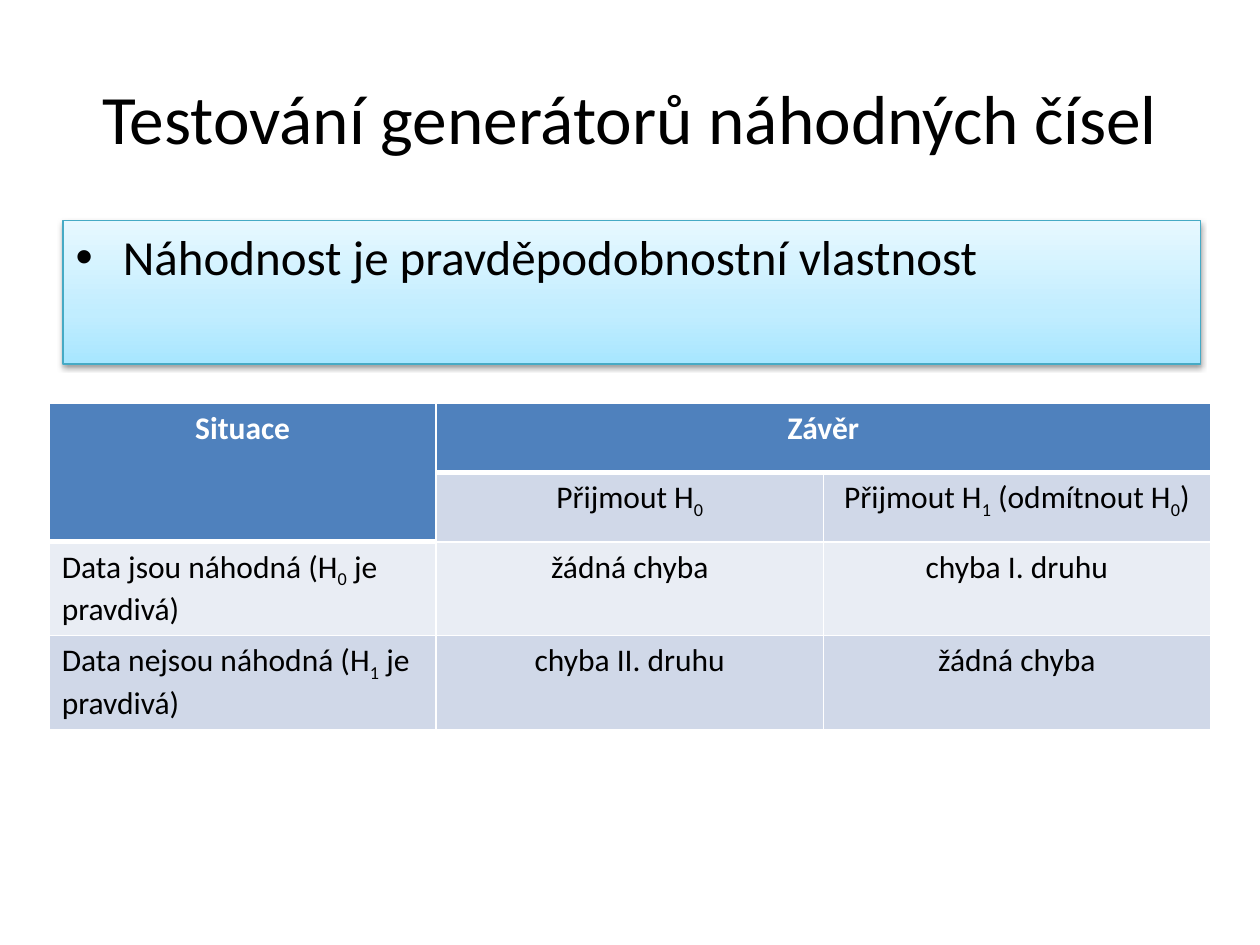
from dataclasses import dataclass

from lxml.etree import SubElement
from pptx import Presentation
from pptx.dml.color import RGBColor
from pptx.enum.text import MSO_ANCHOR, PP_ALIGN as Align
from pptx.oxml import parse_xml
from pptx.oxml.ns import nsdecls, qn
from pptx.util import Pt

FONT = "Calibri"
BLACK = RGBColor(0x00, 0x00, 0x00)
WHITE = RGBColor(0xFF, 0xFF, 0xFF)
HEADER = RGBColor(0x4F, 0x81, 0xBD)
BAND_DARK = RGBColor(0xD0, 0xD8, 0xE8)
BAND_LIGHT = RGBColor(0xE9, 0xED, 0xF4)
FRAME = RGBColor(0x46, 0xAA, 0xC5)
PANEL_STOPS = (
    (0, RGBColor(0xA7, 0xE6, 0xFF)),
    (35, RGBColor(0xC1, 0xED, 0xFF)),
    (100, RGBColor(0xE7, 0xF8, 0xFF)),
)
COL_WIDTH = Pt(221.2)
ROW_HEIGHT = Pt(39.6)
THIN, THICK = Pt(1), Pt(3)


@dataclass
class Cell:
    row: int
    col: int
    text: str
    rows: int = 1
    cols: int = 1

    @property
    def is_header(self) -> bool:
        return self.row == 0

    @property
    def fill(self) -> RGBColor:
        if self.is_header:
            return HEADER
        return BAND_DARK if self.row % 2 else BAND_LIGHT

    @property
    def align(self) -> Align:
        return Align.LEFT if self.row > 1 and self.col == 0 else Align.CENTER


CELLS = [
    Cell(0, 0, "Situace", rows=2),
    Cell(0, 1, "Závěr", cols=2),
    Cell(1, 1, "Přijmout H|0|"),
    Cell(1, 2, "Přijmout H|1| (odmítnout H|0|)"),
    Cell(2, 0, "Data jsou náhodná (H|0| je pravdivá)"),
    Cell(2, 1, "žádná chyba"),
    Cell(2, 2, "chyba I. druhu"),
    Cell(3, 0, "Data nejsou náhodná (H|1| je pravdivá)"),
    Cell(3, 1, "chyba II. druhu"),
    Cell(3, 2, "žádná chyba"),
]


def place(sp, left: float, top: float, width: float, height: float) -> None:
    sp.left, sp.top, sp.width, sp.height = map(Pt, (left, top, width, height))


def set_font(p, size: float, color: RGBColor, bold: bool = False) -> None:
    font = p.font
    font.name, font.size, font.bold = FONT, Pt(size), bold
    font.color.rgb = color


def style_panel(sp) -> None:
    sp.fill.gradient()
    sp.fill.gradient_angle = 90
    stops = sp._element.spPr.find(qn("a:gradFill")).find(qn("a:gsLst"))
    stops.clear()
    for position, color in PANEL_STOPS:
        stop = SubElement(stops, qn("a:gs"), pos=str(position * 1000))
        SubElement(stop, qn("a:srgbClr"), val=str(color))
    sp.line.color.rgb = FRAME
    sp.line.width = Pt(0.75)
    sp._element.spPr.append(parse_xml(
        f'<a:effectLst {nsdecls("a")}>'
        f'<a:outerShdw blurRad="{Pt(3.1)}" dist="{Pt(1.6)}" dir="5400000" rotWithShape="0">'
        '<a:srgbClr val="000000"><a:alpha val="38000"/></a:srgbClr>'
        '</a:outerShdw></a:effectLst>'))


def set_borders(cell, top: int, bottom: int) -> None:
    tc_pr = cell._tc.get_or_add_tcPr()
    for side, width in (("L", THIN), ("R", THIN), ("T", top), ("B", bottom)):
        line = SubElement(tc_pr, qn(f"a:ln{side}"), w=str(width))
        fill = SubElement(line, qn("a:solidFill"))
        SubElement(fill, qn("a:srgbClr"), val=str(WHITE))


def fill_cell(table, item: Cell) -> None:
    cell = table.cell(item.row, item.col)
    if item.rows * item.cols > 1:
        cell.merge(table.cell(item.row + item.rows - 1, item.col + item.cols - 1))
    below_header = item.row == (2 if item.col == 0 else 1)
    set_borders(cell, THICK if below_header else THIN, THICK if item.is_header else THIN)
    cell.fill.solid()
    cell.fill.fore_color.rgb = item.fill
    p = cell.text_frame.paragraphs[0]
    p.alignment = item.align
    set_font(p, 18, WHITE if item.is_header else BLACK, item.is_header)
    for i, part in enumerate(item.text.split("|")):
        if part:
            r = p.add_run()
            r.text = part
            if i % 2:
                r._r.get_or_add_rPr().set("baseline", "-25000")


def main() -> None:
    prs = Presentation()
    prs.slide_width, prs.slide_height = Pt(720), Pt(540)
    s = prs.slides.add_slide(prs.slide_layouts[1])

    title = s.shapes.title
    place(title, 36, 21.6, 648, 90)
    title.text_frame.text = "Testování generátorů náhodných čísel"
    title.text_frame.vertical_anchor = MSO_ANCHOR.MIDDLE
    p = title.text_frame.paragraphs[0]
    p.alignment = Align.CENTER
    set_font(p, 39.6, BLACK)

    body = s.placeholders[1]
    place(body, 36, 126, 650.2, 82.1)
    style_panel(body)
    body.text_frame.text = "Náhodnost je pravděpodobnostní vlastnost"
    set_font(body.text_frame.paragraphs[0], 28, BLACK)

    table = s.shapes.add_table(
        4, 3, Pt(28.1), Pt(230.4), 3 * COL_WIDTH, 4 * ROW_HEIGHT).table
    for column in table.columns:
        column.width = COL_WIDTH
    for item in CELLS:
        fill_cell(table, item)

    prs.save("out.pptx")


if __name__ == "__main__":
    main()
